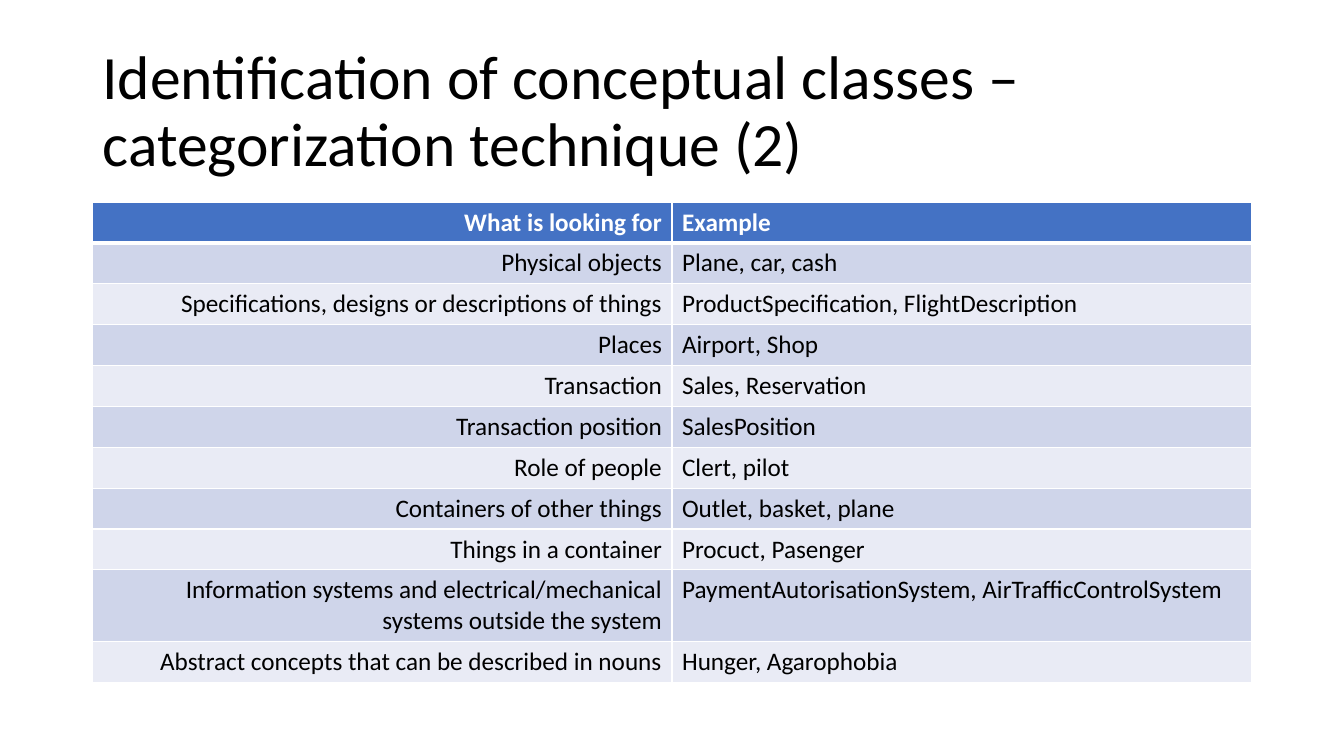
from lxml import etree
from pptx import Presentation
from pptx import util as u
from pptx.dml import color
from pptx.enum import text
from pptx.oxml import ns

FONT = "Calibri"
COLORS = {
    "text": "000000",
    "header": "4472C4",
    "header text": "FFFFFF",
    "odd row": "CFD5EA",
    "even row": "E9EBF5",
    "border": "FFFFFF",
}
ROWS = [
    ("What is looking for", "Example"),
    ("Physical objects", "Plane, car, cash"),
    ("Specifications, designs or descriptions of things",
     "ProductSpecification, FlightDescription"),
    ("Places", "Airport, Shop"),
    ("Transaction", "Sales, Reservation"),
    ("Transaction position", "SalesPosition"),
    ("Role of people", "Clert, pilot"),
    ("Containers of other things", "Outlet, basket, plane"),
    ("Things in a container", "Procuct, Pasenger"),
    ("Information systems and electrical/mechanical systems outside the system",
     "PaymentAutorisationSystem, AirTrafficControlSystem"),
    ("Abstract concepts that can be described in nouns", "Hunger, Agarophobia"),
]
ALIGNMENTS = (text.PP_ALIGN.RIGHT, text.PP_ALIGN.LEFT)
LEFT, WIDTH = u.Cm(2.33), u.Cm(29.21)


def add_run(paragraph, content, size, color_name, bold=False):
    run = paragraph.add_run()
    run.text = content
    run.font.name = FONT
    run.font.size = u.Pt(size)
    run.font.bold = bold
    run.font.color.rgb = color.RGBColor.from_string(COLORS[color_name])


def add_borders(cell, widths):
    """Draw the cell edges; widths maps L, R, T and B to points."""
    properties = cell._tc.get_or_add_tcPr()
    for side, width in widths.items():
        line = etree.SubElement(properties, ns.qn(f"a:ln{side}"), w=str(u.Pt(width)))
        fill = etree.SubElement(line, ns.qn("a:solidFill"))
        etree.SubElement(fill, ns.qn("a:srgbClr"), val=COLORS["border"])


presentation = Presentation()
presentation.slide_width = u.Cm(33.87)
presentation.slide_height = u.Cm(19.05)
slide = presentation.slides.add_slide(presentation.slide_layouts[5])

title = slide.shapes.title
title.left, title.top, title.width, title.height = LEFT, u.Cm(1.01), WIDTH, u.Cm(3.68)
title.text_frame.auto_size = text.MSO_AUTO_SIZE.NONE
title.text_frame.vertical_anchor = text.MSO_ANCHOR.MIDDLE
paragraph = title.text_frame.paragraphs[0]
paragraph.alignment = text.PP_ALIGN.LEFT
paragraph.line_spacing = 0.9
add_run(paragraph, "Identification of conceptual classes – categorization technique (2)", 44, "text")

row_height = u.Cm(1.03)
table = slide.shapes.add_table(
    len(ROWS), 2, LEFT, u.Cm(5.09), WIDTH, row_height * len(ROWS)
).table

for row_index, contents in enumerate(ROWS):
    is_header = row_index == 0
    if is_header:
        fill_name, text_name = "header", "header text"
    else:
        fill_name, text_name = ("odd row" if row_index % 2 else "even row"), "text"
    table.rows[row_index].height = row_height
    for column_index, content in enumerate(contents):
        cell = table.cell(row_index, column_index)
        add_borders(cell, {"L": 1, "R": 1,
                           "T": 3 if row_index == 1 else 1,
                           "B": 3 if is_header else 1})
        cell.fill.solid()
        cell.fill.fore_color.rgb = color.RGBColor.from_string(COLORS[fill_name])
        paragraph = cell.text_frame.paragraphs[0]
        paragraph.alignment = ALIGNMENTS[column_index]
        add_run(paragraph, content, 18, text_name, bold=is_header)

presentation.save("out.pptx")
